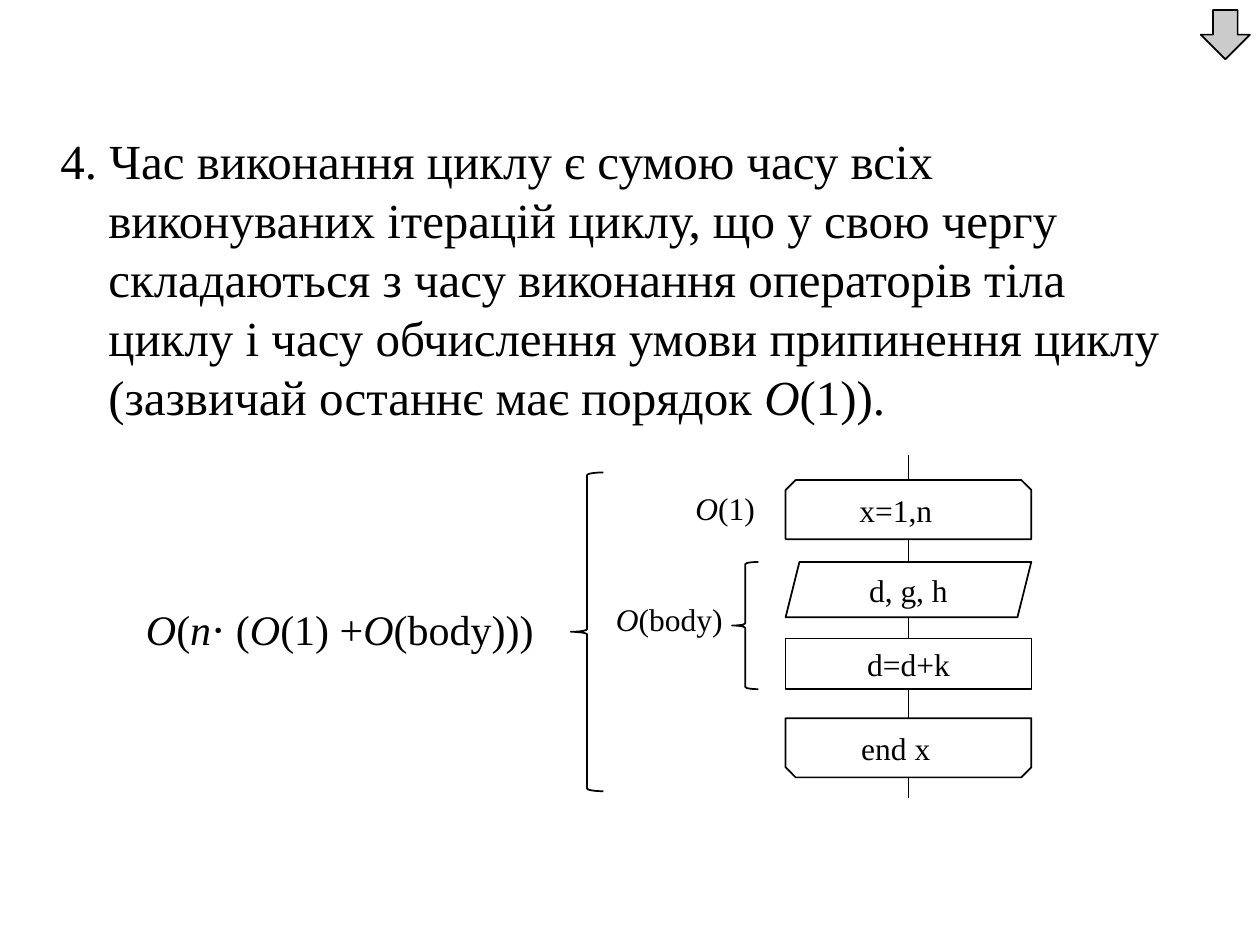
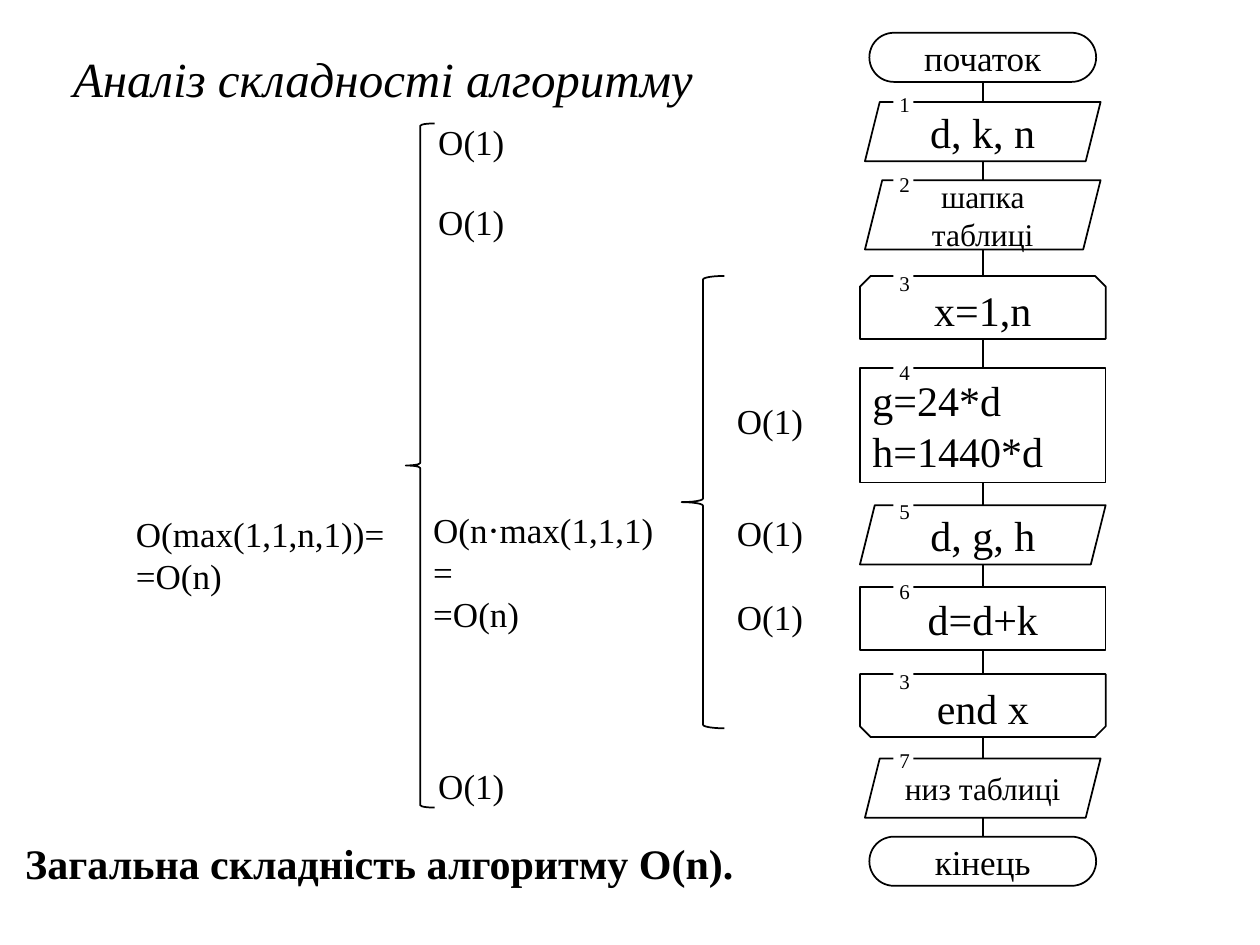
from dataclasses import dataclass
from itertools import pairwise

from lxml.etree import SubElement
from pptx import Presentation
from pptx.dml.color import RGBColor
from pptx.enum.shapes import MSO_CONNECTOR as Line, MSO_SHAPE as Kind
from pptx.enum.text import MSO_ANCHOR as Anchor, MSO_AUTO_SIZE as AutoSize, PP_ALIGN as Align
from pptx.oxml.ns import qn
from pptx.util import Inches, Pt

SLIDE_W, SLIDE_H = Inches(10), Inches(7.5)
GRID_COLS, GRID_ROWS = 100, 75
FONT = "Times New Roman"
COLORS = {"ink": "000000", "paper": "FFFFFF", "arrow": "CBCBCB"}
HANGING = Inches(0.38)
BODY_INSETS = (0.2, 0.05, 0.2, 0.05)
BADGE_LEFT, BADGE_W, BADGE_H = 70.9, 1.6, 3
SNIP = 0.17


@dataclass
class Box:
    """Place on the grid, in columns and rows."""
    left: float
    top: float
    width: float
    height: float

    def emu(self) -> tuple[int, int, int, int]:
        return col(self.left), row(self.top), col(self.width), row(self.height)


@dataclass
class Step:
    """One block of a flowchart; rise is how far its number stands above it."""
    kind: Kind
    text: str
    top: float
    width: float
    height: float
    size: float
    number: str = ""
    rise: float = 1.2
    snips: tuple[float, float] | None = None
    insets: tuple[float, float, float, float] = (0.1, 0.05, 0.1, 0.05)
    align: Align = Align.CENTER


@dataclass
class Label:
    text: str
    box: Box
    size: float
    wrap: bool = False


def col(count: float) -> int:
    return int(SLIDE_W * count / GRID_COLS)


def row(count: float) -> int:
    return int(SLIDE_H * count / GRID_ROWS)


def color(name: str) -> RGBColor:
    return RGBColor.from_string(COLORS[name])


def write(frame, text: str, *, size: float, bold=False, align=Align.LEFT, anchor=Anchor.TOP,
          wrap=True, insets=(0.1, 0.05, 0.1, 0.05), hanging=False, before=0, spacing=None) -> None:
    """Fill a text frame; parts between underscores are italic."""
    frame.auto_size = AutoSize.NONE
    frame.word_wrap, frame.vertical_anchor = wrap, anchor
    (frame.margin_left, frame.margin_top,
     frame.margin_right, frame.margin_bottom) = map(Inches, insets)
    for index, words in enumerate(text.split("\n")):
        paragraph = frame.add_paragraph() if index else frame.paragraphs[0]
        paragraph.alignment, paragraph.line_spacing = align, spacing
        paragraph.space_before = Pt(before)
        if hanging:
            properties = paragraph._p.get_or_add_pPr()
            properties.set("marL", str(HANGING))
            properties.set("indent", str(-HANGING))
        for part, piece in enumerate(words.split("_")):
            if piece:
                run = paragraph.add_run()
                run.text = piece
                font = run.font
                font.name, font.size, font.bold, font.italic = FONT, Pt(size), bold, part % 2 == 1
                font.color.rgb = color("ink")


def add_text(slide, text: str, box: Box, **fmt) -> None:
    write(slide.shapes.add_textbox(*box.emu()).text_frame, text, **fmt)


def add_outline(slide, kind: Kind, box: Box, fill: str = "", line: float = 1, adjust=()):
    shape = slide.shapes.add_shape(kind, *box.emu())
    shape.shadow.inherit = False
    for index, value in enumerate(adjust):
        shape.adjustments[index] = value
    if fill:
        shape.fill.solid()
        shape.fill.fore_color.rgb = color(fill)
    else:
        shape.fill.background()
    if line:
        shape.line.color.rgb = color("ink")
        shape.line.width = Pt(line)
    else:
        shape.line.fill.background()
    return shape


def add_brace(slide, box: Box) -> None:
    add_outline(slide, Kind.LEFT_BRACE, box, adjust=(0.083, 0.5))


def add_link(slide, center: float, top: float, bottom: float, above=None, below=None) -> None:
    link = slide.shapes.add_connector(Line.STRAIGHT, col(center), row(top), col(center), row(bottom))
    link.line.color.rgb = color("ink")
    link.line.width = Pt(1)
    SubElement(link._element.spPr, qn("a:effectLst"))
    joinable = (Kind.RECTANGLE, Kind.ROUNDED_RECTANGLE)
    if above is not None and above.auto_shape_type in joinable:
        link.begin_connect(above, 2)
    if below is not None and below.auto_shape_type in joinable:
        link.end_connect(below, 0)


def add_flowchart(slide, center: float, steps: list[Step]) -> None:
    adjustments = {Kind.PARALLELOGRAM: (0.25,), Kind.ROUNDED_RECTANGLE: (0.5,)}
    blocks = []
    for step in steps:
        box = Box(center - step.width / 2, step.top, step.width, step.height)
        block = add_outline(slide, step.kind, box,
                            line=0.75 if step.kind == Kind.RECTANGLE else 1,
                            adjust=step.snips or adjustments.get(step.kind, ()))
        write(block.text_frame, step.text, size=step.size, align=step.align,
              anchor=Anchor.MIDDLE, insets=step.insets)
        blocks.append(block)
    for (upper, above), (lower, below) in pairwise(zip(steps, blocks)):
        add_link(slide, center, upper.top + upper.height, lower.top, above, below)
    # Step numbers cover the upper border of their blocks
    for step in steps:
        if step.number:
            badge = add_outline(slide, Kind.RECTANGLE,
                                Box(BADGE_LEFT, step.top - step.rise, BADGE_W, BADGE_H),
                                fill="paper", line=0)
            write(badge.text_frame, step.number, size=12, align=Align.CENTER,
                  anchor=Anchor.MIDDLE, wrap=False, insets=(0.02, 0, 0, 0))


def add_labels(slide, labels: list[Label]) -> None:
    for label in labels:
        add_text(slide, label.text, label.box, size=label.size, wrap=label.wrap)


def build_loop_rule(deck) -> None:
    slide = deck.slides.add_slide(deck.slide_layouts[6])
    add_text(slide,
             "4. Час виконання циклу є сумою часу всіх виконуваних ітерацій циклу, "
             "що у свою чергу складаються з часу виконання операторів тіла циклу "
             "і часу обчислення умови припинення циклу "
             "(зазвичай останнє має порядок _О_(1)).",
             Box(2.8, 9.9, 94.5, 26.8), size=28, insets=BODY_INSETS, hanging=True, before=5.6)
    add_outline(slide, Kind.DOWN_ARROW, Box(95.3, 0.8, 3.9, 3.9), fill="arrow", adjust=(0.5, 0.5))

    # Loop flowchart with its entry and exit lines
    center, width = 72.1, 19.5
    steps = [
        Step(Kind.SNIP_2_SAME_RECTANGLE, "x=1,n", 38.1, width, 4.7, 18,
             snips=(SNIP, 0), insets=(0.1, 0.01, 0.3, 0.05)),
        Step(Kind.PARALLELOGRAM, "d, g, h", 44.6, width, 4.4, 18),
        Step(Kind.RECTANGLE, "d=d+k", 50.7, width, 4, 18),
        Step(Kind.SNIP_2_SAME_RECTANGLE, "end x", 57, width, 4.7, 18,
             snips=(0, SNIP), insets=(0.1, 0.09, 0.3, 0.05)),
    ]
    add_flowchart(slide, center, steps)
    add_link(slide, center, 36.1, 38.1)
    add_link(slide, center, 61.7, 63.3)

    # Cost of each part
    add_brace(slide, Box(58.1, 44.6, 2.1, 10.1))
    add_brace(slide, Box(45.3, 37.5, 2.6, 25.3))
    add_labels(slide, [
        Label("_O_(1)", Box(54.2, 38.3, 6.8, 4), 18),
        Label("_O_(body)", Box(47.9, 47.1, 10.6, 4), 18),
        Label("_O_(_n_⋅ (_O_(1) +_O_(body)))", Box(10.6, 47.4, 33.9, 5), 24, wrap=True),
    ])


def build_analysis(deck) -> None:
    slide = deck.slides.add_slide(deck.slide_layouts[5])
    title = slide.shapes.title
    title.left, title.top, title.width, title.height = Box(0, 3.9, 57.8, 5.5).emu()
    write(title.text_frame, "_Аналіз складності алгоритму_", size=28,
          insets=(0.58, 0.05, 0.2, 0.05), before=5.6, spacing=0.9)
    add_text(slide, "Загальна складність алгоритму O(n).", Box(0, 66.4, 60.9, 5.5), size=24,
             bold=True, insets=BODY_INSETS, hanging=True, before=4.8, spacing=0.9)

    # Costs and the braces that sum them up
    add_brace(slide, Box(54.1, 21.9, 3.4, 35.9))
    add_brace(slide, Box(32.2, 9.8, 2.3, 54.3))
    unit_costs = {57.5: (31.2, 40.1, 46.8), 33.8: (9.1, 15.4, 60.2)}
    add_labels(slide, [Label("О(1)", Box(left, top, 7.3, 4.4), 20)
                       for left, tops in unit_costs.items() for top in tops])
    add_labels(slide, [
        Label("О(n⋅max(1,1,1)=\n=O(n)", Box(33.4, 39.9, 20, 7.7), 20, wrap=True),
        Label("О(max(1,1,n,1))=\n=O(n)", Box(9.8, 40.2, 21.9, 7.7), 20),
    ])

    # Whole algorithm
    end, data, body = 18, 18.7, 19.5
    add_flowchart(slide, 78, [
        Step(Kind.ROUNDED_RECTANGLE, "початок", 2.6, end, 3.9, 20),
        Step(Kind.PARALLELOGRAM, "d, k, n", 8.1, data, 4.7, 24, "1", 1.3),
        Step(Kind.PARALLELOGRAM, "шапка таблиці", 14.3, data, 5.5, 18, "2"),
        Step(Kind.SNIP_2_SAME_RECTANGLE, "x=1,n", 21.9, body, 5, 24, "3", 0.9, (SNIP, 0)),
        Step(Kind.RECTANGLE, "g=24*d\nh=1440*d", 29.2, body, 9.1, 24, "4", align=Align.LEFT),
        Step(Kind.PARALLELOGRAM, "d, g, h", 40.1, body, 4.7, 24, "5", 1),
        Step(Kind.RECTANGLE, "d=d+k", 46.6, body, 5, 24, "6"),
        Step(Kind.SNIP_2_SAME_RECTANGLE, "end x", 53.5, body, 5, 24, "3", 0.9, (0, SNIP),
             (0.1, 0.13, 0.1, 0.05)),
        Step(Kind.PARALLELOGRAM, "низ таблиці", 60.2, data, 4.7, 18, "7", 1.4),
        Step(Kind.ROUNDED_RECTANGLE, "кінець", 66.4, end, 3.9, 20),
    ])


def main() -> None:
    deck = Presentation()
    deck.slide_width, deck.slide_height = SLIDE_W, SLIDE_H
    build_loop_rule(deck)
    build_analysis(deck)
    deck.save("out.pptx")


if __name__ == "__main__":
    main()
